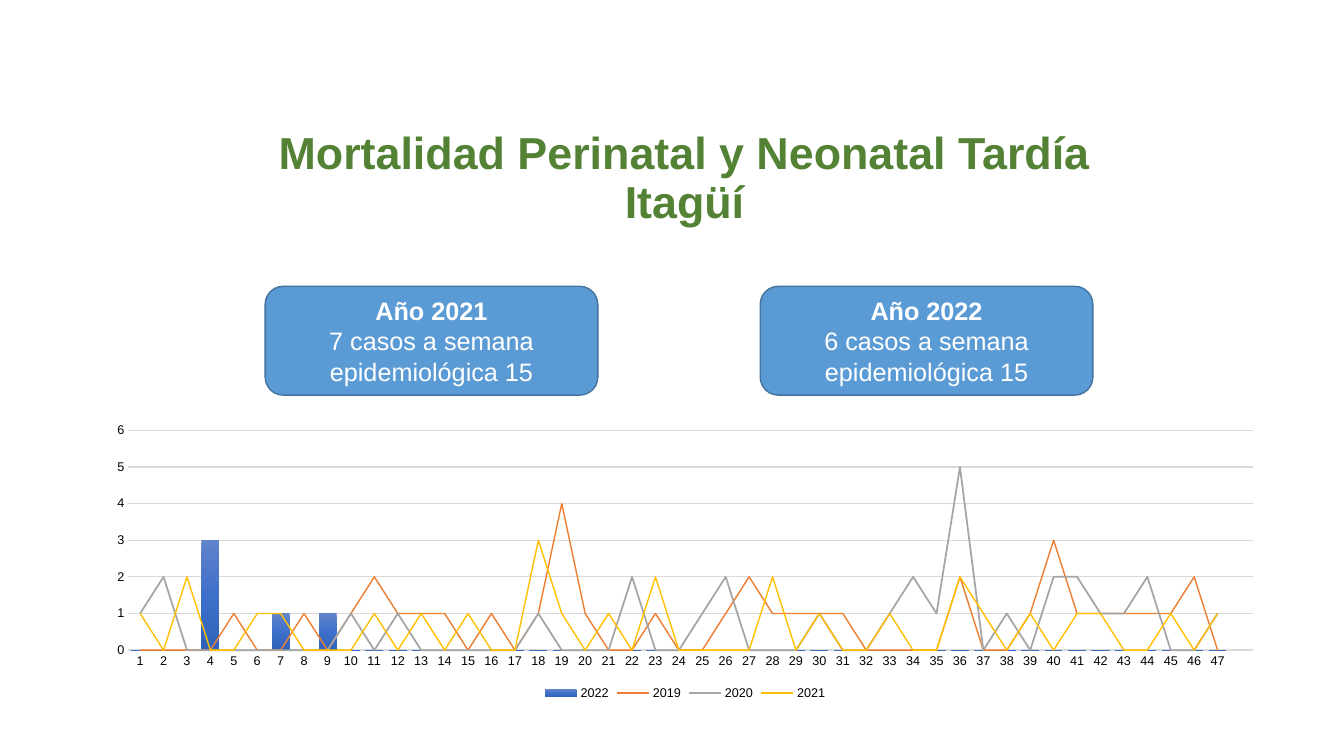
from dataclasses import dataclass

from lxml import etree
from pptx import Presentation
from pptx.chart.chart import Chart
from pptx.chart.data import CategoryChartData
from pptx.dml.color import RGBColor
from pptx.enum.chart import (XL_CHART_TYPE, XL_LEGEND_POSITION, XL_MARKER_STYLE,
                             XL_TICK_MARK)
from pptx.enum.shapes import MSO_SHAPE
from pptx.enum.text import MSO_ANCHOR, MSO_AUTO_SIZE, PP_ALIGN
from pptx.oxml import parse_xml
from pptx.oxml.ns import nsdecls, qn
from pptx.slide import Slide
from pptx.text.text import Font
from pptx.util import Inches, Pt

COLUMN = XL_CHART_TYPE.COLUMN_CLUSTERED
BOTTOM = XL_LEGEND_POSITION.BOTTOM
NO_MARKER = XL_MARKER_STYLE.NONE
NO_TICK = XL_TICK_MARK.NONE
ROUNDED = MSO_SHAPE.ROUNDED_RECTANGLE
CENTER = PP_ALIGN.CENTER

FONT = "Arial"
WIDTH, HEIGHT = Inches(13.33), Inches(7.5)
COLORS = {
    "title": "548235", "card": "5B9BD5", "card_line": "43739E",
    "white": "FFFFFF", "black": "000000", "grid": "D9D9D9",
    "2019": "ED7D31", "2020": "A5A5A5", "2021": "FFC000",
}
BAR_GRADIENT = {0: "6183CB", 50: "3E70CA", 100: "3062BB"}

# Card grid, in inches
CARD_LEFT, CARD_TOP, CARD_STEP = 2.63, 2.84, 4.91
CARD_W, CARD_H = 3.3, 1.08


@dataclass
class Card:
    column: int
    heading: str
    detail: str


@dataclass
class YearSeries:
    year: str
    weekly: str  # one digit per week
    width: float = 0

    def values(self) -> list:
        return [int(d) for d in self.weekly] + [None]


CARDS = [
    Card(0, "Año 2021", "7 casos a semana epidemiológica 15"),
    Card(1, "Año 2022", "6 casos a semana epidemiológica 15"),
]
BARS = YearSeries("2022", "000300101".ljust(47, "0"))
LINES = [
    YearSeries("2019", "00001001012111010141001001211110000200131111120", 1),
    YearSeries("2020", "12000000010100000100020012000100121501022112001", 1.25),
    YearSeries("2021", "10200110001010100310102000020100100210101100101", 1),
]


def rgb(name: str) -> RGBColor:
    return RGBColor.from_string(COLORS[name])


def style_font(font: Font, size: float, color: str, bold: bool = False) -> None:
    font.name, font.size, font.bold = FONT, Pt(size), bold
    font.color.rgb = rgb(color)


def add_title(s: Slide, lines: list[str]) -> None:
    title = s.shapes.title
    title.left, title.top = Inches(1.55), Inches(1.31)
    title.width, title.height = Inches(10.48), Inches(1)
    tf = title.text_frame
    tf.word_wrap, tf.auto_size = True, MSO_AUTO_SIZE.NONE
    tf.vertical_anchor = MSO_ANCHOR.BOTTOM
    p = tf.paragraphs[0]
    p.alignment, p.line_spacing = CENTER, 0.9
    for i, line in enumerate(lines):
        if i:
            p.add_line_break()
        r = p.add_run()
        r.text = line
        style_font(r.font, 32, "title", True)


def add_card(s: Slide, card: Card) -> None:
    sp = s.shapes.add_shape(ROUNDED, Inches(CARD_LEFT + card.column * CARD_STEP),
                            Inches(CARD_TOP), Inches(CARD_W), Inches(CARD_H))
    sp.shadow.inherit = False
    sp.fill.solid()
    sp.fill.fore_color.rgb = rgb("card")
    sp.line.color.rgb = rgb("card_line")
    sp.line.width = Pt(1)
    tf = sp.text_frame
    tf.word_wrap, tf.vertical_anchor = True, MSO_ANCHOR.MIDDLE
    for i, text in enumerate((card.heading, card.detail)):
        p = tf.add_paragraph() if i else tf.paragraphs[0]
        p.alignment = CENTER
        r = p.add_run()
        r.text = text
        style_font(r.font, 18, "white", i == 0)


def move_to_lines(chart: Chart) -> None:
    """Turn every series after the first into a line on the same axes."""
    bar = chart.plots[0]._element
    line = parse_xml(f'<c:lineChart {nsdecls("c")}><c:grouping val="standard"/>'
                     '<c:varyColors val="0"/></c:lineChart>')
    for ser in bar.findall(qn("c:ser"))[1:]:
        for invert in ser.findall(qn("c:invertIfNegative")):
            ser.remove(invert)
        line.append(ser)
    etree.SubElement(line, qn("c:marker")).set("val", "1")
    for axis in bar.findall(qn("c:axId")):
        etree.SubElement(line, qn("c:axId")).set("val", axis.get("val"))
    bar.addnext(line)


def fill_bars(chart: Chart) -> None:
    stops = "".join(f'<a:gs pos="{pos * 1000}"><a:srgbClr val="{color}"/></a:gs>'
                    for pos, color in BAR_GRADIENT.items())
    sp_pr = chart.plots[0].series[0]._element.get_or_add_spPr()
    sp_pr.append(parse_xml(f'<a:gradFill {nsdecls("a")} rotWithShape="1">'
                           f'<a:gsLst>{stops}</a:gsLst>'
                           '<a:lin ang="5400000" scaled="0"/></a:gradFill>'))


def add_weekly_chart(s: Slide) -> None:
    data = CategoryChartData()
    data.categories = [str(week) for week in range(1, 48)] + [""]
    for item in [BARS, *LINES]:
        data.add_series(item.year, item.values())
    chart = s.shapes.add_chart(COLUMN, Inches(0.93), Inches(4.14),
                               Inches(11.73), Inches(2.85), data).chart
    chart.has_title = False
    style_font(chart.font, 10, "black")
    move_to_lines(chart)

    # Series
    bars, lines = chart.plots
    bars.gap_width, bars.vary_by_categories = 30, False
    fill_bars(chart)
    for series, item in zip(lines.series, LINES):
        series.format.line.color.rgb = rgb(item.year)
        series.format.line.width = Pt(item.width)
        series.marker.style = NO_MARKER
        series.smooth = False

    # Axes and legend
    weeks, cases = chart.category_axis, chart.value_axis
    for axis in (weeks, cases):
        axis.major_tick_mark = axis.minor_tick_mark = NO_TICK
        style_font(axis.tick_labels.font, 9, "black")
    weeks.format.line.color.rgb = rgb("grid")
    weeks.format.line.width = Pt(1)
    cases.minimum_scale, cases.maximum_scale, cases.major_unit = 0, 6, 1
    cases.format.line.fill.background()
    grid = cases.major_gridlines.format.line
    grid.color.rgb, grid.width = rgb("grid"), Pt(0.75)
    chart.has_legend = True
    chart.legend.position, chart.legend.include_in_layout = BOTTOM, False
    style_font(chart.legend.font, 9, "black")


def main() -> None:
    prs = Presentation()
    prs.slide_width, prs.slide_height = WIDTH, HEIGHT
    s = prs.slides.add_slide(prs.slide_layouts[5])
    add_title(s, ["Mortalidad Perinatal y Neonatal Tardía", "Itagüí"])
    for card in CARDS:
        add_card(s, card)
    add_weekly_chart(s)
    prs.save("out.pptx")


if __name__ == "__main__":
    main()
